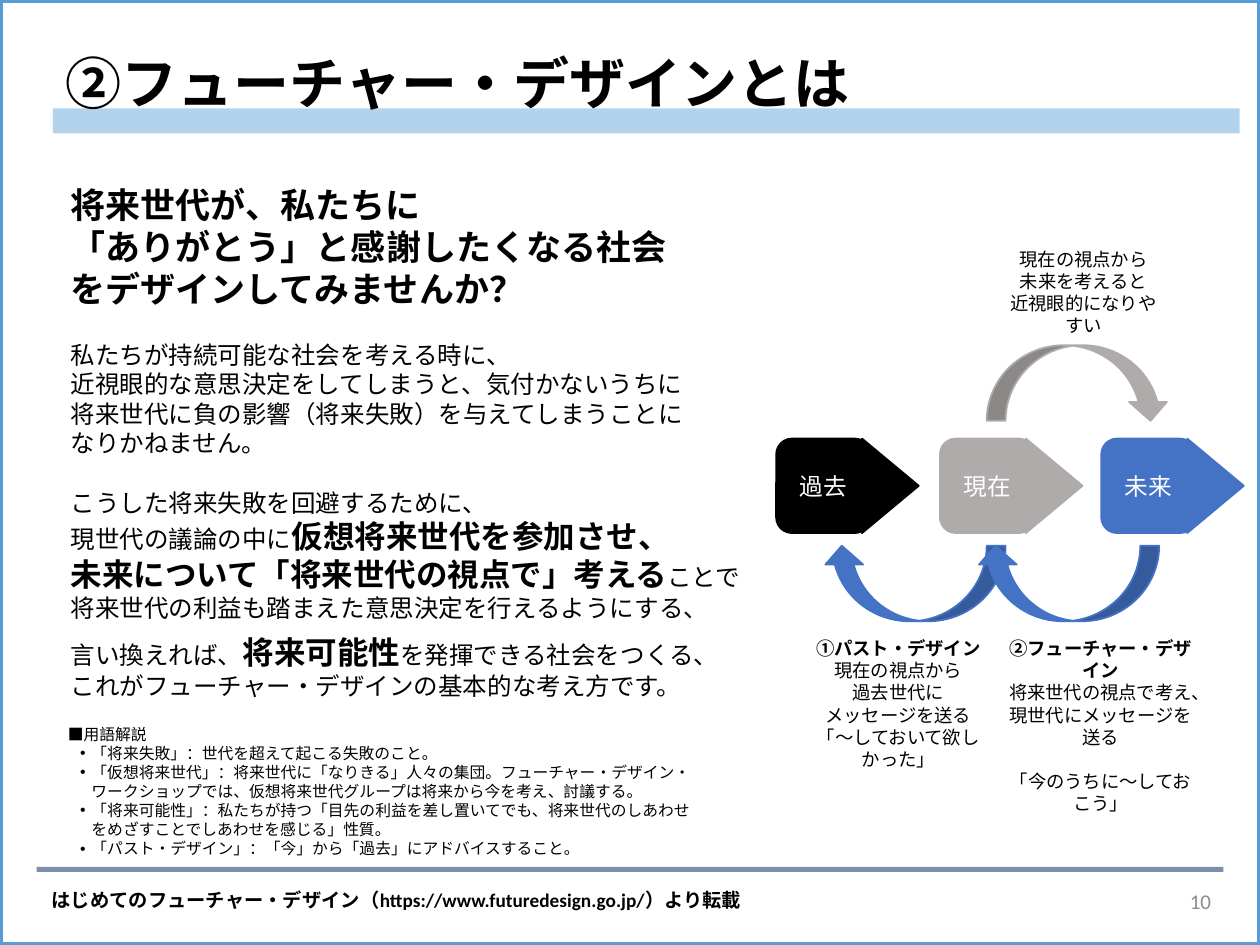
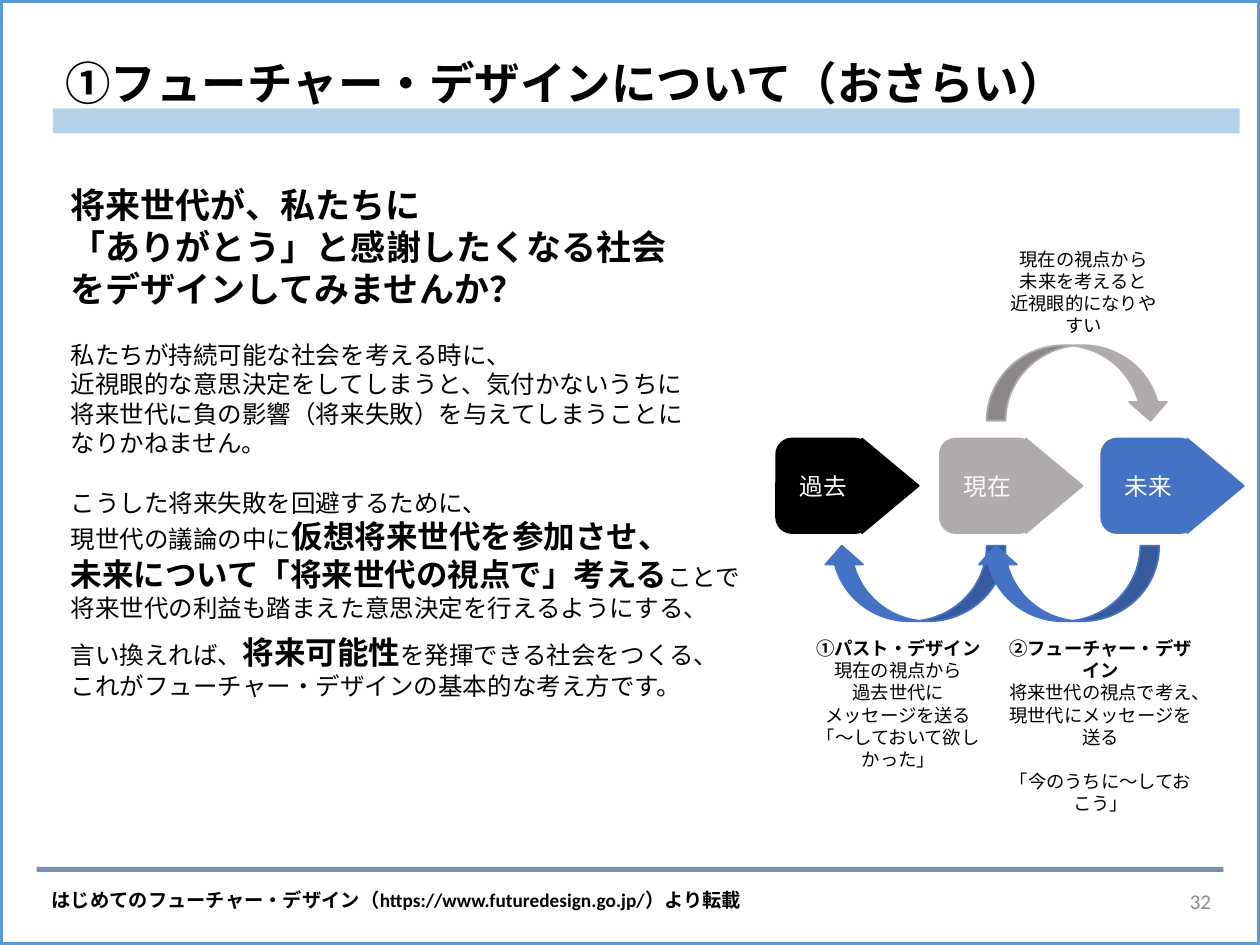
from lxml import etree
from pptx import Presentation
from pptx.dml.color import RGBColor
from pptx.enum.shapes import MSO_SHAPE
from pptx.enum.text import MSO_ANCHOR, MSO_AUTO_SIZE, PP_ALIGN
from pptx.oxml.ns import qn
from pptx.util import Pt

COLORS = {
    "text": "000000", "label": "FFFFFF", "number": "8C8C8C",
    "past": "000000", "present": "AFABAB", "future": "4472C4",
    "title band": "0070C0", "footer rule": "002060", "border": "5B9BD5",
}
CJK = "Noto Sans CJK JP"


def write(frame, text, size=14, font=CJK, bold=False, color="text", align=PP_ALIGN.LEFT,
          line=None, before=0, bullet=False, same_line=False):
    """Add a run, in a new paragraph unless same_line is set."""
    paragraph = frame.paragraphs[-1]
    if paragraph.runs and not same_line:
        paragraph = frame.add_paragraph()
    if not same_line:
        paragraph.alignment = align
        paragraph.space_before = Pt(before)
        if line:
            paragraph.line_spacing = Pt(line) if line > 2 else line
        properties = paragraph._p.get_or_add_pPr()
        properties.set("marL", str(Pt(13.5) if bullet else 0))
        properties.set("indent", str(Pt(-6.5) if bullet else 0))
        if bullet:
            etree.SubElement(properties, qn("a:buFont")).set("typeface", "Arial")
            etree.SubElement(properties, qn("a:buChar")).set("char", "•")
        else:
            etree.SubElement(properties, qn("a:buNone"))
    run = paragraph.add_run()
    run.text = text
    run.font.size = Pt(size)
    run.font.bold = bold
    run.font.name = font
    run.font.color.rgb = RGBColor.from_string(COLORS[color])
    if font == CJK:
        east_asian = etree.Element(qn("a:ea"))
        east_asian.set("typeface", font)
        run._r.rPr.find(qn("a:latin")).addnext(east_asian)


def draw(slide, kind, left, top, width, height, fill=None, line=None, weight=1, alpha=None,
         rotation=0):
    """Add a preset shape without shadow."""
    shape = slide.shapes.add_shape(kind, Pt(left), Pt(top), Pt(width), Pt(height))
    shape.shadow.inherit = False
    shape.rotation = rotation
    if fill:
        shape.fill.solid()
        shape.fill.fore_color.rgb = RGBColor.from_string(COLORS[fill])
    else:
        shape.fill.background()
    if line:
        shape.line.color.rgb = RGBColor.from_string(COLORS[line])
        shape.line.width = Pt(weight)
    else:
        shape.line.fill.background()
    if alpha:
        hex_color = shape._element.spPr.find(qn("a:solidFill"))[0]
        etree.SubElement(hex_color, qn("a:alpha")).set("val", str(alpha * 1000))
    return shape


# Content: slides as (title, title size, page number, has glossary)
PAGES = [
    ("②フューチャー・デザインとは", 32, "10", True),
    ("①フューチャー・デザインについて（おさらい）", 26, "32", False),
]

# Message: (line height, space before, runs of (text, size, bold))
MESSAGE = [
    (24, 0, [("将来世代が、私たちに", 20, True)]),
    (24, 0, [("「ありがとう」と感謝したくなる社会", 20, True)]),
    (24, 0, [("をデザインしてみませんか？", 20, True)]),
    (16.9, 16.9, [("私たちが持続可能な社会を考える時に、", 14, False)]),
    (16.9, 0, [("近視眼的な意思決定をしてしまうと、気付かないうちに", 14, False)]),
    (16.9, 0, [("将来世代に負の影響（将来失敗）を与えてしまうことに", 14, False)]),
    (16.9, 0, [("なりかねません。", 14, False)]),
    (16.9, 16.9, [("こうした将来失敗を回避するために、", 14, False)]),
    (21.7, 0, [("現世代の議論の中に", 14, False), ("仮想将来世代を参加させ、", 18, True)]),
    (21.7, 0, [("未来について「将来世代の視点で」考える", 18, True), ("ことで", 14, False)]),
    (16.9, 0, [("将来世代の利益も踏まえた意思決定を行えるようにする、", 14, False)]),
    (21.7, 6, [("言い換えれば、", 14, False), ("将来可能性", 18, True),
               ("を発揮できる社会をつくる、", 14, False)]),
    (16.9, 0, [("これがフューチャー・デザインの基本的な考え方です。", 14, False)]),
]

GLOSSARY = [
    "「将来失敗」：世代を超えて起こる失敗のこと。",
    "「仮想将来世代」：将来世代に「なりきる」人々の集団。フューチャー・デザイン・ワークショップでは、"
    "仮想将来世代グループは将来から今を考え、討議する。",
    "「将来可能性」：私たちが持つ「目先の利益を差し置いてでも、将来世代のしあわせをめざすことで"
    "しあわせを感じる」性質。",
    "「パスト・デザイン」：「今」から「過去」にアドバイスすること。",
]

ERAS = [("過去", "past", 443.5), ("現在", "present", 537.1), ("未来", "future", 629.3)]

# Curved arrows: (left, top, colour, rotation)
VIEWS = [(563.8, 197.3, "present", 0), (470.2, 311.8, "future", 180), (558, 311.8, "future", 180)]

# Captions: (left, top, width, height, heading, lines of (text, space before))
CAPTIONS = [
    (565.2, 138.2, 108, 45.4, None,
     [("現在の視点から", 0), ("未来を考えると", 0), ("近視眼的になりやすい", 0)]),
    (568.1, 360.7, 121.7, 70.6, "②フューチャー・デザイン",
     [("将来世代の視点で考え、", 0), ("現世代にメッセージを送る", 0),
      ("「今のうちに～しておこう」", 12.6)]),
    (453.6, 360.7, 119.5, 70.6, "①パスト・デザイン",
     [("現在の視点から", 0), ("過去世代に", 0), ("メッセージを送る", 0),
      ("「～しておいて欲しかった」", 0)]),
]

deck = Presentation()
deck.slide_width, deck.slide_height = Pt(720), Pt(540)

for heading, heading_size, page_number, has_glossary in PAGES:
    slide = deck.slides.add_slide(deck.slide_layouts[1])
    title, message = slide.placeholders[0], slide.placeholders[1]

    # Border, title band and footer rule, behind the placeholders
    border = draw(slide, MSO_SHAPE.RECTANGLE, 0, 0, 720, 540, line="border", weight=3)
    band = draw(slide, MSO_SHAPE.RECTANGLE, 30.2, 61.9, 678.2, 14.4, "title band", alpha=30)
    rule = draw(slide, MSO_SHAPE.RECTANGLE, 20.9, 495.4, 678.2, 2.9, "footer rule", alpha=51)
    for backdrop in (border, band, rule):
        title._element.addprevious(backdrop._element)

    # Title
    title.left, title.top, title.width, title.height = Pt(30.2), Pt(10.8), Pt(620.6), Pt(77)
    title.text_frame.auto_size = MSO_AUTO_SIZE.NONE
    title.text_frame.vertical_anchor = MSO_ANCHOR.MIDDLE
    write(title.text_frame, heading, size=heading_size, font="Arial", bold=True, line=0.9)

    # Message
    message.left, message.top, message.width, message.height = Pt(33.1), Pt(101.5), Pt(406.8), Pt(384.5)
    message.text_frame.auto_size = MSO_AUTO_SIZE.NONE
    for line_height, gap, runs in MESSAGE:
        for position, (text, size, bold) in enumerate(runs):
            write(message.text_frame, text, size=size, bold=bold, line=line_height, before=gap,
                  same_line=position > 0)

    # Source and page number
    source = slide.shapes.add_textbox(Pt(29.5), Pt(504), Pt(406.1), Pt(20.9)).text_frame
    source.margin_left = 0
    source.vertical_anchor = MSO_ANCHOR.MIDDLE
    write(source, "はじめてのフューチャー・デザイン（https://www.futuredesign.go.jp/）より転載",
          size=11, font="Calibri", bold=True)
    number = slide.shapes.add_textbox(Pt(537.1), Pt(500.4), Pt(162), Pt(28.8)).text_frame
    number.word_wrap = True
    number.vertical_anchor = MSO_ANCHOR.MIDDLE
    write(number, page_number, size=12, font="Calibri", color="number", align=PP_ALIGN.RIGHT)

    # Past, present and future: a rounded box with a triangular tip
    for era, color, left in ERAS:
        box = draw(slide, MSO_SHAPE.ROUNDED_RECTANGLE, left, 250.6, 54, 54, color, color)
        box.text_frame.vertical_anchor = MSO_ANCHOR.MIDDLE
        write(box.text_frame, era, size=13.5, font="Calibri", color="label",
              align=PP_ALIGN.CENTER)
        draw(slide, MSO_SHAPE.ISOSCELES_TRIANGLE, left + 38.3, 261.4, 54, 32.4, color, color,
             rotation=90)

    # Curved arrows between the eras
    for left, top, color, rotation in VIEWS:
        draw(slide, MSO_SHAPE.CURVED_DOWN_ARROW, left, top, 104.4, 43.2, color, color,
             rotation=rotation)

    # Captions of the arrows
    for left, top, width, height, name, lines in CAPTIONS:
        caption = slide.shapes.add_textbox(Pt(left), Pt(top), Pt(width), Pt(height)).text_frame
        caption.word_wrap = True
        if name:
            write(caption, name, size=10.5, bold=True, align=PP_ALIGN.CENTER, line=12.6)
        for text, gap in lines:
            write(caption, text, size=10.5, align=PP_ALIGN.CENTER, line=12.6, before=gap)

    # Glossary
    if has_glossary:
        glossary = slide.shapes.add_textbox(Pt(31.7), Pt(410.4), Pt(378), Pt(83.5)).text_frame
        glossary.word_wrap = True
        write(glossary, "■用語解説", size=9, font="Arial", line=10.9)
        for entry in GLOSSARY:
            write(glossary, entry, size=9, font="Arial", line=10.9, bullet=True)

deck.save("out.pptx")
